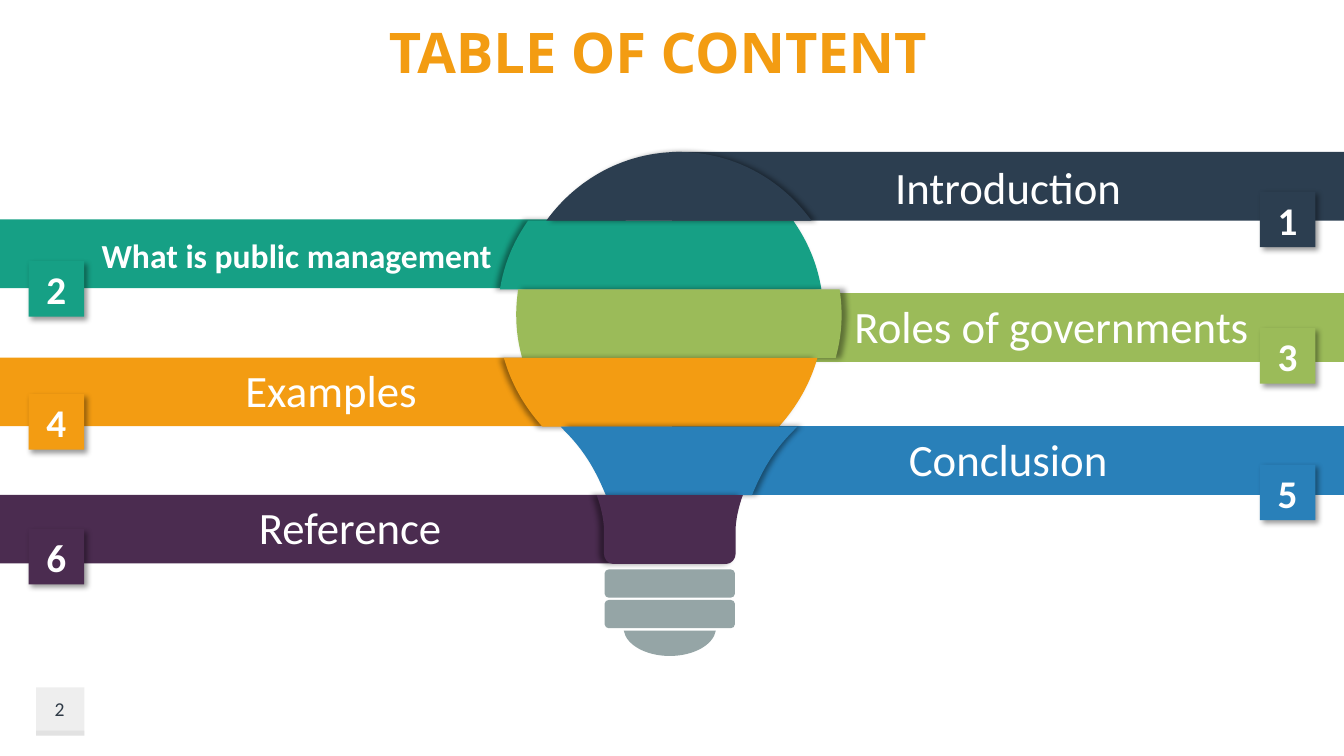
import lxml.etree
import pptx
import pptx.dml.color
import pptx.enum.shapes
import pptx.enum.text
import pptx.oxml.ns
import pptx.util

Cm = pptx.util.Cm
Pt = pptx.util.Pt
qn = pptx.oxml.ns.qn
MSO = pptx.enum.shapes.MSO_SHAPE
ALIGN = pptx.enum.text.PP_ALIGN
ANCHOR = pptx.enum.text.MSO_ANCHOR

COLORS = {
    "navy": "2C3E50", "teal": "16A085", "green": "9BBB59",
    "orange": "F39C12", "blue": "2980B9", "purple": "4B2C50",
    "gray": "95A5A6", "pale": "BFBFBF", "ink": "2F3A46", "white": "FFFFFF",
}
ROW = 1.73
BULB_TOP = 3.83
BADGE = 1.4
BADGE_LEFT = {"left": 0.72, "right": 31.75}
SHADOW_ANGLE = {"left": 180, "right": 0}
TOPICS = [
    (2, "teal", "left", "What is public management", (-1.88, 5.53, 17.65), 6.58),
    (3, "green", "right", "Roles of governments", (18.03, 7.39, 16.94), 8.27),
    (1, "navy", "right", "Introduction", (16.94, 3.83, 16.94), 4.83),
    (4, "orange", "left", "Examples", (0, 9.01, 16.94), 9.93),
    (5, "blue", "right", "Conclusion", (16.94, 10.74, 16.94), 11.71),
    (6, "purple", "left", "Reference", (0, 12.47, 17.65), 13.33),
]
BAND_STYLE = {
    1: {"anchor": ANCHOR.MIDDLE},
    2: {"size": 24, "bold": True, "insets": (1.31, 0.4, 0.25)},
    4: {"insets": (0.25, 0.13, 0.5)},
}
SLICES = {
    1: (17.11, [(0, 0), (1.37, 0), (2.59, 0.69), (3.34, ROW)]),
    2: (16.65, [(3.34, 0), (3.7, 0.51), (3.95, 1.09), (4.05, ROW)]),
    3: (17.11, [(4.05, 0), (4.08, 0.2), (4.1, 0.43), (4.1, 0.64),
                (4.1, 1.02), (4.05, 1.37), (3.95, ROW)]),
    4: (16.65, [(3.95, 0), (3.77, 0.64), (3.44, 1.22), (2.98, ROW)]),
    5: (17.11, [(2.98, 0), (2.93, 0.06), (2.87, 0.12), (2.81, 0.18),
                (2.27, 0.74), (2.02, 1.3), (1.84, ROW)]),
    6: (16.88, [(1.84, 0), (1.69, 0.41), (1.66, 0.74), (1.66, 0.84),
                (1.66, 1.05), (1.66, 1.26), (1.66, 1.47),
                (1.66, 1.6), (1.56, ROW), (1.43, ROW)]),
}
SOCKET = [(1.54, 0), (1.59, 0), (1.64, 0.04), (1.64, 0.09),
          (1.64, 0.27), (1.64, 0.44), (1.64, 0.62),
          (1.64, 0.67), (1.59, 0.71), (1.54, 0.71)]
CAP = [(1.16, 0), (1.1, 0.36), (0.6, 0.64), (0, 0.64)]


def rgb(name):
    """Return the named colour."""
    return pptx.dml.color.RGBColor.from_string(COLORS[name])


def paint(sp, color, angle=None):
    """Fill a shape without outline, with a soft shadow if an angle is given."""
    sp.shadow.inherit = False
    sp.fill.solid()
    sp.fill.fore_color.rgb = rgb(color)
    sp.line.fill.background()
    if angle is not None:
        effects = sp._element.spPr.find(qn("a:effectLst"))
        shadow = lxml.etree.SubElement(
            effects, qn("a:outerShdw"), blurRad=str(Pt(4)), dist=str(Pt(3)),
            dir=str(angle * 60000), algn="ctr", rotWithShape="0")
        black = lxml.etree.SubElement(shadow, qn("a:srgbClr"), val="000000")
        lxml.etree.SubElement(black, qn("a:alpha"), val="40000")


def write(sp, text, size, color="white", bold=False, font="Calibri",
          align=ALIGN.CENTER, anchor=ANCHOR.MIDDLE, insets=(0.25, 0.13, 0.25)):
    """Put one formatted line of text in a shape."""
    tf = sp.text_frame
    tf.text = text
    tf.word_wrap = True
    tf.vertical_anchor = anchor
    tf.margin_left, tf.margin_top, tf.margin_right = map(Cm, insets)
    p = tf.paragraphs[0]
    p.alignment = align
    r = p.runs[0]
    r.font.name = font
    r.font.size = Pt(size)
    r.font.bold = bold
    r.font.color.rgb = rgb(color)


def add_block(slide, box, color, angle=None):
    """Add a filled rectangle in the box."""
    sp = slide.shapes.add_shape(MSO.RECTANGLE, *map(Cm, box))
    paint(sp, color, angle)
    return sp


def add_label(slide, box, text, size, **style):
    """Add a text box in the box."""
    sp = slide.shapes.add_textbox(*map(Cm, box))
    write(sp, text, size, **style)


def bend(lines):
    """Merge each three line segments into one cubic curve."""
    for i in range(0, len(lines), 3):
        cubic = lxml.etree.Element(qn("a:cubicBezTo"))
        lines[i].addprevious(cubic)
        for line in lines[i:i + 3]:
            cubic.append(line[0])
            line.getparent().remove(line)


def add_slice(slide, axis, top, profile, color, angle=None):
    """Add a curved outline that mirrors the profile about a vertical axis."""
    outline = [(axis - x, top + y) for x, y in profile]
    outline += [(axis + x, top + y) for x, y in reversed(profile)]
    points = [(Cm(x), Cm(y)) for x, y in outline]
    builder = slide.shapes.build_freeform(*points[0], scale=1.0)
    builder.add_line_segments(points[1:], close=True)
    sp = builder.convert_to_shape()
    lines = sp._element.findall(".//" + qn("a:lnTo"))
    count = len(profile)
    bend(lines[:count - 1])
    bend(lines[count:2 * count - 1])
    paint(sp, color, angle)


def add_bands(slide):
    """Add the coloured topic bands."""
    for number, color, _, text, (left, top, width), _ in TOPICS:
        sp = add_block(slide, (left, top, width, ROW), color)
        write(sp, text, **{"size": 32, "anchor": ANCHOR.TOP, **BAND_STYLE.get(number, {})})


def add_bulb(slide, base_axis, base_top):
    """Add the gray base at the given place and the bulb slices."""
    pitch = 0.77
    for i, profile in enumerate((SOCKET, SOCKET, CAP)):
        add_slice(slide, base_axis, base_top + i * pitch, profile, "gray")
    for number, color, side, *_ in TOPICS:
        axis, profile = SLICES[number]
        add_slice(slide, axis, BULB_TOP + (number - 1) * ROW, profile, color,
                  SHADOW_ANGLE[side])


def add_badges(slide):
    """Add the numbered squares."""
    for number, color, side, _, _, top in TOPICS:
        sp = add_block(slide, (BADGE_LEFT[side], top, BADGE, BADGE), color, angle=45)
        write(sp, str(number), 28, bold=True)


def add_page_number(slide, left, top, size):
    """Add the translucent page marker with its number."""
    strip = 0.13
    for y, height in ((top, size), (top + size - strip, strip)):
        sp = add_block(slide, (left, y, size, height), "pale")
        tint = sp._element.spPr.find(".//" + qn("a:srgbClr"))
        lxml.etree.SubElement(tint, qn("a:alpha"), val="25000")
    add_label(slide, (left - 0.02, top, size, size - strip), "2", 14, color="ink")


def main():
    """Build and save the slide."""
    prs = pptx.Presentation()
    prs.slide_width, prs.slide_height = Cm(33.87), Cm(19.05)
    slide = prs.slides.add_slide(prs.slide_layouts[6])
    add_page_number(slide, 0.91, 17.32, 1.22)
    add_bands(slide)
    add_label(slide, (9.55, 0.3, 15.62, 1.96), "TABLE OF CONTENT", 40, color="orange",
              bold=True, font="Open Sans", align=ALIGN.LEFT)
    add_bulb(slide, 16.88, 14.35)
    add_badges(slide)
    prs.save("out.pptx")


if __name__ == "__main__":
    main()
